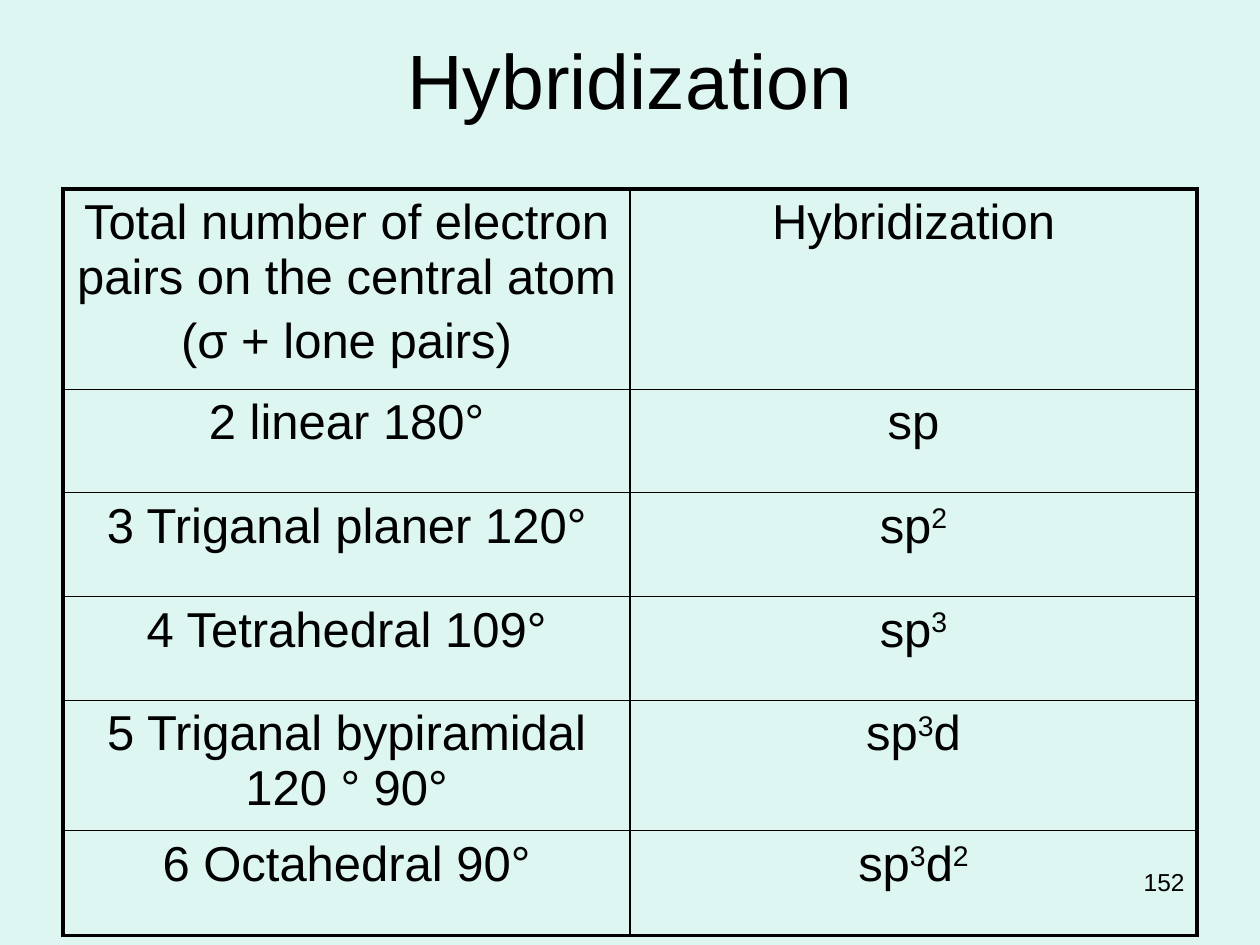
import itertools

import pptx
import pptx.dml.color
import pptx.enum.text
import pptx.oxml
import pptx.oxml.ns
import pptx.util

Pt = pptx.util.Pt
ALIGN = pptx.enum.text.PP_ALIGN
ANCHOR = pptx.enum.text.MSO_ANCHOR
INK = "000000"
BACKGROUND = "DEF6F1"

ROW_HEIGHTS = [114.5, 59, 59.5, 59.25, 74.25, 59.75]
ROWS = [
    ("Total number of electron pairs on the central atom\n(σ + lone pairs)", "Hybridization"),
    ("2 linear 180°", "sp"),
    ("3 Triganal planer 120°", "sp2"),
    ("4 Tetrahedral 109°", "sp3"),
    ("5 Triganal bypiramidal 120 ° 90°", "sp3d"),
    ("6 Octahedral 90°", "sp3d2"),
]


def color(value):
    return pptx.dml.color.RGBColor.from_string(value)


def write(frame, text, size=28, align=ALIGN.CENTER, gap=0, raise_digits=False):
    frame.word_wrap = True
    for index, line in enumerate(text.split("\n")):
        para = frame.add_paragraph() if index else frame.paragraphs[0]
        para.alignment = align
        para.space_before = Pt(gap if index else 0)
        parts = [line]
        if raise_digits:
            parts = ["".join(group) for _, group in itertools.groupby(line, str.isdigit)]
        for part in parts:
            span = para.add_run()
            span.text = part
            span.font.size = Pt(size)
            span.font.name = "Arial"
            span.font.color.rgb = color(INK)
            if raise_digits and part.isdigit():
                span.font._element.set("baseline", "30000")


def set_border(cell, side, width):
    properties = cell._tc.get_or_add_tcPr()
    properties.append(pptx.oxml.parse_xml(
        f'<a:ln{side} {pptx.oxml.ns.nsdecls("a")} w="{Pt(width)}">'
        f'<a:solidFill><a:srgbClr val="{INK}"/></a:solidFill></a:ln{side}>'
    ))


def add_title(page, left, top, width, height):
    title = page.shapes.title
    title.left, title.top, title.width, title.height = map(Pt, (left, top, width, height))
    title.text_frame.vertical_anchor = ANCHOR.MIDDLE
    write(title.text_frame, "Hybridization", size=44)


def add_page_number(page, left, top, width, height):
    box = page.shapes.add_textbox(*map(Pt, (left, top, width, height)))
    write(box.text_frame, "152", size=14, align=ALIGN.RIGHT)


def add_hybridization_table(page, left, top, width):
    row_count, column_count = len(ROWS), len(ROWS[0])
    box = page.shapes.add_table(
        row_count, column_count, *map(Pt, (left, top, width, sum(ROW_HEIGHTS)))
    )
    table = box.table
    table.first_row = table.horz_banding = False
    for column in table.columns:
        column.width = Pt(width / column_count)
    for row, (height, texts) in enumerate(zip(ROW_HEIGHTS, ROWS)):
        table.rows[row].height = Pt(height)
        for column, text in enumerate(texts):
            cell = table.cell(row, column)
            cell.margin_left = cell.margin_right = Pt(7.2)
            cell.margin_top = cell.margin_bottom = Pt(3.6)
            outer_sides = {
                "L": column == 0,
                "R": column == column_count - 1,
                "T": row == 0,
                "B": row == row_count - 1,
            }
            for side, is_outer in outer_sides.items():
                set_border(cell, side, 2.25 if is_outer else 1)
            cell.fill.background()
            write(cell.text_frame, text, gap=5.6, raise_digits=column == 1)


def main():
    deck = pptx.Presentation()
    deck.slide_width, deck.slide_height = Pt(720), Pt(540)
    page = deck.slides.add_slide(deck.slide_layouts[5])
    page.background.fill.solid()
    page.background.fill.fore_color.rgb = color(BACKGROUND)
    add_page_number(page, 516, 492, 168, 37.5)
    add_title(page, 36, 0, 648, 90)
    add_hybridization_table(page, 36, 108, 648)
    deck.save("out.pptx")


if __name__ == "__main__":
    main()
